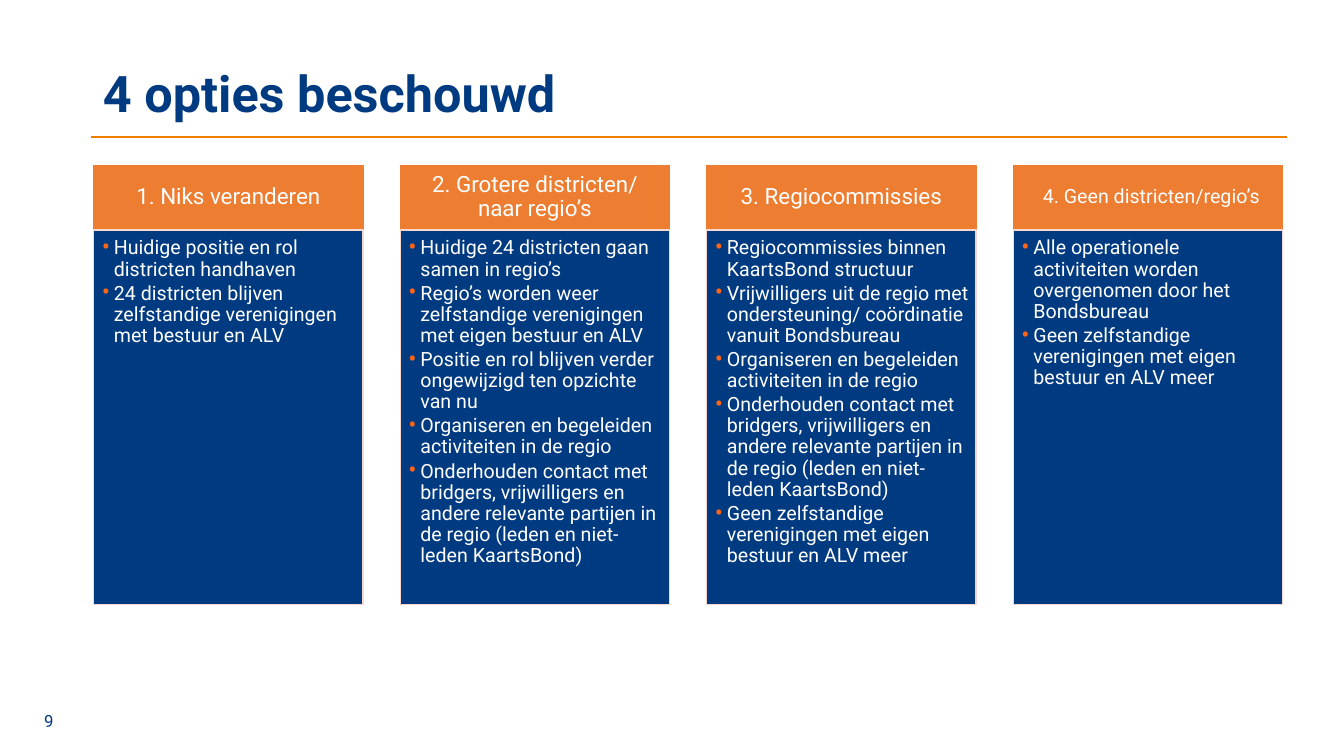
from lxml import etree
from pptx import Presentation, util as u
from pptx.dml.color import RGBColor
from pptx.enum import shapes, text
from pptx.oxml import parse_xml
from pptx.oxml.ns import qn

PX = 9144
THEME = {
    "font": "Roboto",
    "navy": RGBColor.from_string("003A81"),
    "orange": RGBColor.from_string("ED7D31"),
    "rule": RGBColor.from_string("EF7F01"),
    "edge": RGBColor.from_string("F8D7CE"),
    "white": RGBColor.from_string("FFFFFF"),
    "bullet": "FF6418",
    "title": 36, "heading": 16, "small_heading": 14, "body": 14, "number": 12,
}
LEFT, PITCH, WIDTH = 93, 304, 267
HEADING_TOP, HEADING_HEIGHT, BODY_HEIGHT = 164, 64, 372
HEADING_INSETS = (12, 7, 12, 7)
BODY_INSETS = (8, 8, 11, 12)
OPTIONS = [
    ("1. Niks veranderen", "heading", HEADING_INSETS, BODY_INSETS, [
        "Huidige positie en rol districten handhaven",
        "24 districten blijven zelfstandige verenigingen met bestuur en ALV"]),
    ("2. Grotere districten/\vnaar regio’s", "heading", HEADING_INSETS, BODY_INSETS, [
        "Huidige 24 districten gaan samen in regio’s",
        "Regio’s worden weer zelfstandige verenigingen met eigen bestuur en ALV",
        "Positie en rol blijven verder ongewijzigd ten opzichte van nu",
        "Organiseren en begeleiden activiteiten in de regio",
        "Onderhouden contact met bridgers, vrijwilligers en andere relevante "
        "partijen in de regio (leden en niet-leden KaartsBond)"]),
    ("3. Regiocommissies", "heading", HEADING_INSETS, (8, 8, 4, 12), [
        "Regiocommissies binnen KaartsBond structuur",
        "Vrijwilligers uit de regio met ondersteuning/ coördinatie vanuit Bondsbureau",
        "Organiseren en begeleiden activiteiten in de regio",
        "Onderhouden contact met bridgers, vrijwilligers en andere relevante "
        "partijen in de regio (leden en niet-leden KaartsBond)",
        "Geen zelfstandige verenigingen met eigen bestuur en ALV meer"]),
    ("4. Geen districten/regio’s", "small_heading", (11, 6, 4, 6), BODY_INSETS, [
        "Alle operationele activiteiten worden overgenomen door het Bondsbureau",
        "Geen zelfstandige verenigingen met eigen bestuur en ALV meer"]),
]


def write(shape, lines, size, color, anchor, insets=(10, 5, 10, 5), bold=False,
          bulleted=False, **paragraph_format):
    frame = shape.text_frame
    frame_format = {"word_wrap": True, "auto_size": text.MSO_AUTO_SIZE.NONE,
                    "vertical_anchor": anchor}
    for side, inset in zip(("left", "top", "right", "bottom"), insets):
        frame_format["margin_" + side] = inset * PX
    for name, value in frame_format.items():
        setattr(frame, name, value)
    frame.text = "\n".join(lines)
    for paragraph in frame.paragraphs:
        if bulleted:
            properties = paragraph._p.get_or_add_pPr()
            properties.set("marL", str(12 * PX))
            properties.set("indent", str(-12 * PX))
            bullet_color = etree.SubElement(properties, qn("a:buClr"))
            etree.SubElement(bullet_color, qn("a:srgbClr"), val=THEME["bullet"])
            etree.SubElement(properties, qn("a:buSzPct"), val="125000")
            etree.SubElement(properties, qn("a:buFont"), typeface=THEME["font"])
            etree.SubElement(properties, qn("a:buChar"), char="•")
        for name, value in paragraph_format.items():
            setattr(paragraph, name, value)
        for run in paragraph.runs:
            for name, value in {"name": THEME["font"], "size": u.Pt(THEME[size]),
                                "bold": bold}.items():
                setattr(run.font, name, value)
            run.font.color.rgb = THEME[color]


def add_panel(slide, left, top, height, fill, line):
    panel = slide.shapes.add_shape(
        shapes.MSO_SHAPE.RECTANGLE, left * PX, top * PX, WIDTH * PX, height * PX)
    panel.shadow.inherit = False
    panel.fill.solid()
    panel.fill.fore_color.rgb = THEME[fill]
    panel.line.color.rgb = THEME[line]
    panel.line.width = u.Pt(1)
    return panel


presentation = Presentation()
presentation.slide_width = 1333 * PX
presentation.slide_height = 750 * PX
slide = presentation.slides.add_slide(presentation.slide_layouts[5])

rule = slide.shapes.add_connector(
    shapes.MSO_CONNECTOR.STRAIGHT, 90 * PX, 136 * PX, 1276 * PX, 136 * PX)
rule.line.color.rgb = THEME["rule"]
rule.line.width = u.Pt(2)
etree.SubElement(rule._element.spPr, qn("a:effectLst"))

title = slide.shapes.title
for name, value in {"left": 92, "top": 40, "width": 1052, "height": 111}.items():
    setattr(title, name, value * PX)
write(title, ["4 opties beschouwd"], "title", "navy", text.MSO_ANCHOR.MIDDLE,
      bold=True, alignment=text.PP_ALIGN.LEFT, line_spacing=0.9)

for column, (heading, heading_size, heading_insets, body_insets, points) in enumerate(OPTIONS):
    left = LEFT + column * PITCH
    header = add_panel(slide, left, HEADING_TOP, HEADING_HEIGHT, "orange", "orange")
    write(header, [heading], heading_size, "white", text.MSO_ANCHOR.MIDDLE,
          heading_insets, alignment=text.PP_ALIGN.CENTER, line_spacing=0.9)
    body = add_panel(slide, left, HEADING_TOP + HEADING_HEIGHT, BODY_HEIGHT, "navy", "edge")
    write(body, points, "body", "white", text.MSO_ANCHOR.TOP, body_insets, bulleted=True,
          alignment=text.PP_ALIGN.LEFT, line_spacing=0.9, space_after=u.Pt(2))

number = slide.shapes.add_textbox(34 * PX, 695 * PX, 300 * PX, 40 * PX)
write(number, ["9"], "number", "navy", text.MSO_ANCHOR.MIDDLE)

presentation.save("out.pptx")
